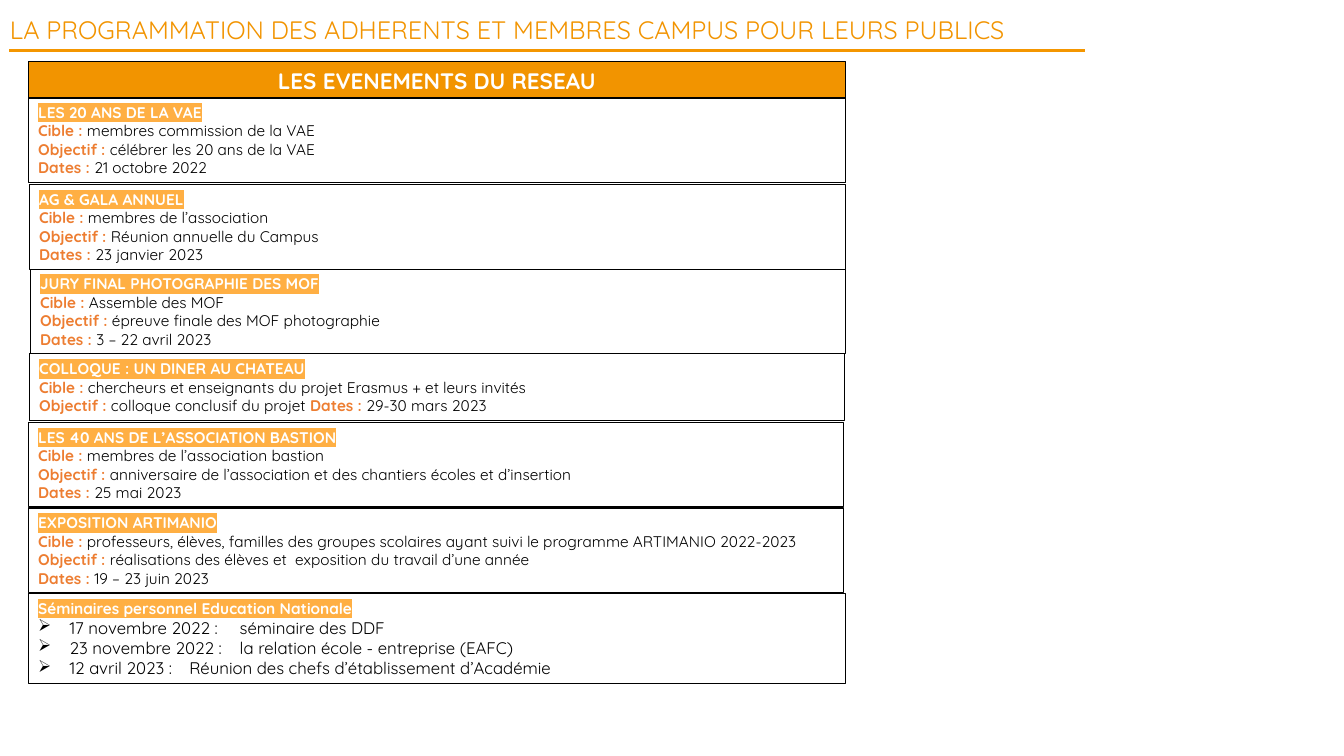
import pptx
import pptx.dml.color
import pptx.enum.shapes
import pptx.enum.text
import pptx.oxml.ns
import pptx.util
from lxml import etree

COLORS = {
    "title": "F29400", "rule": "F49600", "label": "ED7D31",
    "highlight": "FFAF43", "text": "000000", "white": "FFFFFF",
}
EVENTS = [
    ((20.16, 69.84, 583.92, 60.48), "LES 20 ANS DE LA VAE", [
        [("Cible : ", "membres commission de la VAE")],
        [("Objectif : ", "célébrer les 20 ans de la VAE")],
        [("Dates : ", "21 octobre 2022")]]),
    ((20.88, 131.76, 583.2, 60.48), "AG & GALA ANNUEL", [
        [("Cible : ", "membres de l’association")],
        [("Objectif : ", "Réunion annuelle du Campus")],
        [("Dates : ", "23 janvier 2023")]]),
    ((21.6, 192.24, 582.48, 60.48), "JURY FINAL PHOTOGRAPHIE DES MOF", [
        [("Cible : ", "Assemble des MOF")],
        [("Objectif : ", "épreuve finale des MOF photographie")],
        [("Dates : ", "3 – 22 avril 2023")]]),
    ((20.88, 252.72, 582.48, 47.52), "COLLOQUE : UN DINER AU CHATEAU", [
        [("Cible : ", "chercheurs et enseignants du projet Erasmus + et leurs invités")],
        [("Objectif : ", "colloque conclusif du projet "), ("Dates : ", "29-30 mars 2023")]]),
    ((20.16, 301.68, 582.48, 60.48), "LES 40 ANS DE L’ASSOCIATION BASTION", [
        [("Cible : ", "membres de l’association bastion")],
        [("Objectif : ", "anniversaire de l’association et des chantiers écoles et d’insertion")],
        [("Dates : ", "25 mai 2023")]]),
    ((20.16, 362.88, 582.48, 60.48), "EXPOSITION ARTIMANIO", [
        [("Cible : ", "professeurs, élèves, familles des groupes scolaires ayant suivi "
                      "le programme ARTIMANIO 2022-2023")],
        [("Objectif : ", "réalisations des élèves et  exposition du travail d’une année")],
        [("Dates : ", "19 – 23 juin 2023")]]),
]
SEMINARS = [
    "17 novembre 2022 : \tséminaire des DDF",
    "23 novembre 2022 :\tla relation école - entreprise (EAFC)",
    "12 avril 2023 :\tRéunion des chefs d’établissement d’Académie",
]


class SlideBuilder:
    """Draws the elements of one slide in a shared style."""

    def __init__(self, slide, font_name):
        self.slide = slide
        self.font_name = font_name

    def color(self, name):
        return pptx.dml.color.RGBColor.from_string(COLORS[name])

    def lengths(self, values):
        return [pptx.util.Pt(value) for value in values]

    def frame(self, shape):
        text_frame = shape.text_frame
        text_frame.word_wrap = True
        text_frame.auto_size = pptx.enum.text.MSO_AUTO_SIZE.SHAPE_TO_FIT_TEXT
        return text_frame

    def run(self, paragraph, text, size, color, bold=False, highlight=False):
        run = paragraph.add_run()
        run.text = text
        run.font.size = pptx.util.Pt(size)
        run.font.bold = bold
        run.font.name = self.font_name
        run.font.color.rgb = self.color(color)
        if highlight:
            mark = etree.Element(pptx.oxml.ns.qn("a:highlight"))
            etree.SubElement(mark, pptx.oxml.ns.qn("a:srgbClr"), val=COLORS["highlight"])
            run.font.fill._xPr.find(pptx.oxml.ns.qn("a:solidFill")).addnext(mark)

    def title(self, box, text):
        shape = self.slide.shapes.add_textbox(*self.lengths(box))
        self.run(self.frame(shape).paragraphs[0], text, 18, "title")

    def rule(self, ends):
        connector = self.slide.shapes.add_connector(
            pptx.enum.shapes.MSO_CONNECTOR.STRAIGHT, *self.lengths(ends))
        connector.line.color.rgb = self.color("rule")
        connector.line.width = pptx.util.Pt(2)
        etree.SubElement(connector._element.spPr, pptx.oxml.ns.qn("a:effectLst"))

    def panel(self, box, fill=None):
        shape = self.slide.shapes.add_shape(
            pptx.enum.shapes.MSO_SHAPE.RECTANGLE, *self.lengths(box))
        shape.shadow.inherit = False
        if fill:
            shape.fill.solid()
            shape.fill.fore_color.rgb = self.color(fill)
        else:
            shape.fill.background()
        shape.line.color.rgb = self.color("text")
        shape.line.width = pptx.util.Pt(0.75)
        return self.frame(shape)

    def banner(self, box, text):
        paragraph = self.panel(box, "title").paragraphs[0]
        paragraph.alignment = pptx.enum.text.PP_ALIGN.CENTER
        self.run(paragraph, text, 16, "white", bold=True)

    def headed_panel(self, box, heading):
        text_frame = self.panel(box)
        paragraph = text_frame.paragraphs[0]
        paragraph.alignment = pptx.enum.text.PP_ALIGN.LEFT
        self.run(paragraph, heading, 11, "white", bold=True, highlight=True)
        return text_frame

    def line(self, text_frame):
        paragraph = text_frame.add_paragraph()
        paragraph.alignment = pptx.enum.text.PP_ALIGN.LEFT
        return paragraph

    def event(self, box, heading, lines):
        text_frame = self.headed_panel(box, heading)
        for parts in lines:
            paragraph = self.line(text_frame)
            for label, value in parts:
                self.run(paragraph, label, 11, "label", bold=True)
                self.run(paragraph, value, 11, "text")

    def bullet_list(self, box, heading, items):
        text_frame = self.headed_panel(box, heading)
        indent = pptx.util.Pt(22.5)
        for item in items:
            paragraph = self.line(text_frame)
            properties = paragraph._p.get_or_add_pPr()
            properties.set("marL", str(indent))
            properties.set("indent", str(-indent))
            etree.SubElement(properties, pptx.oxml.ns.qn("a:buChar"), char="➢")
            self.run(paragraph, item, 12, "text")


def main():
    presentation = pptx.Presentation()
    presentation.slide_width = pptx.util.Pt(960)
    presentation.slide_height = pptx.util.Pt(540)
    slide = presentation.slides.add_slide(presentation.slide_layouts[6])
    builder = SlideBuilder(slide, "Quicksand")
    builder.title((0, 6.48, 899.28, 28.8),
                  "LA PROGRAMMATION DES ADHERENTS ET MEMBRES CAMPUS POUR LEURS PUBLICS")
    builder.rule((6.48, 36, 774.72, 36))
    builder.banner((20.16, 43.92, 583.92, 26.64), "LES EVENEMENTS DU RESEAU")
    for box, heading, lines in EVENTS:
        builder.event(box, heading, lines)
    builder.bullet_list((20.16, 424.08, 583.92, 64.08),
                        "Séminaires personnel Education Nationale", SEMINARS)
    presentation.save("out.pptx")


if __name__ == "__main__":
    main()
